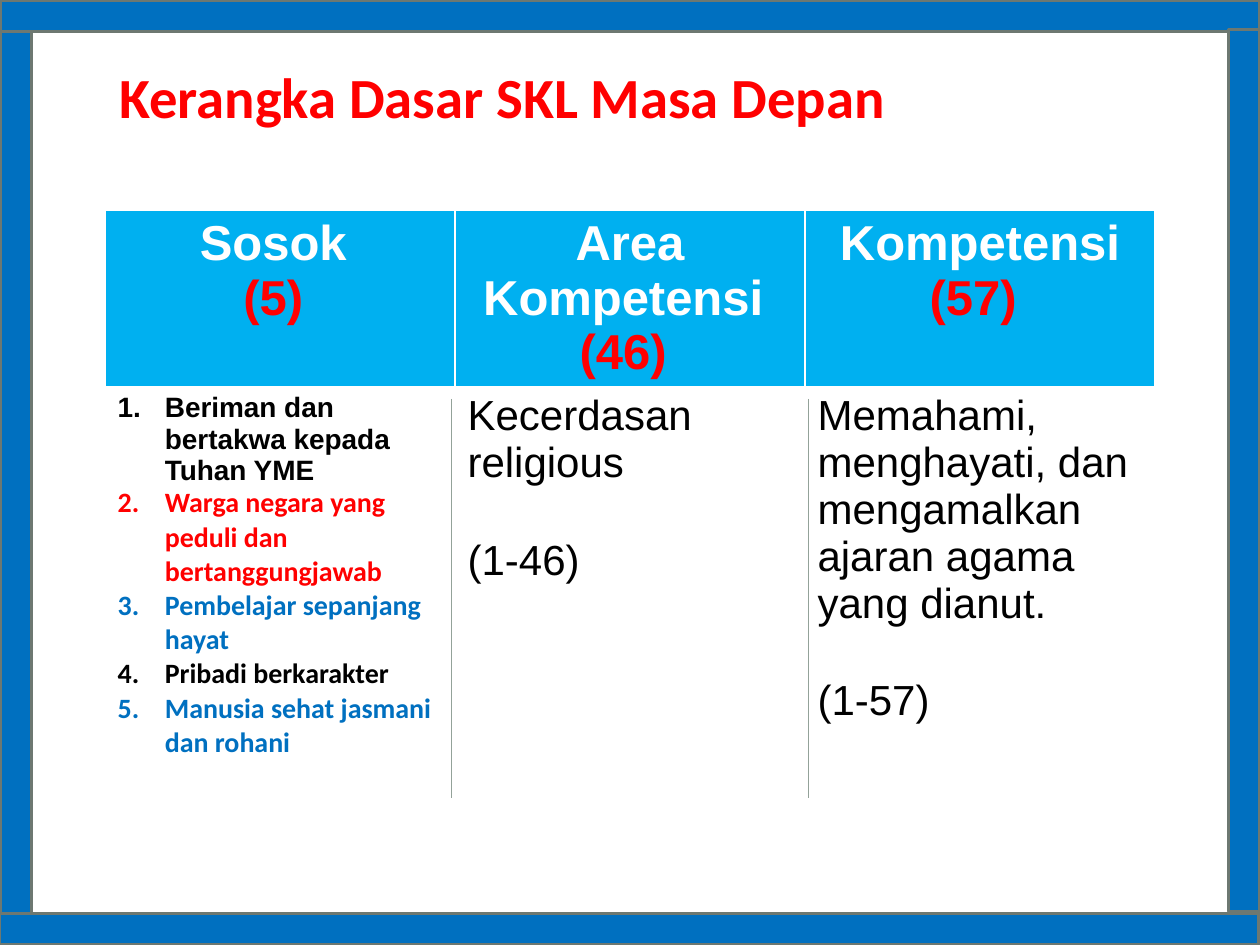
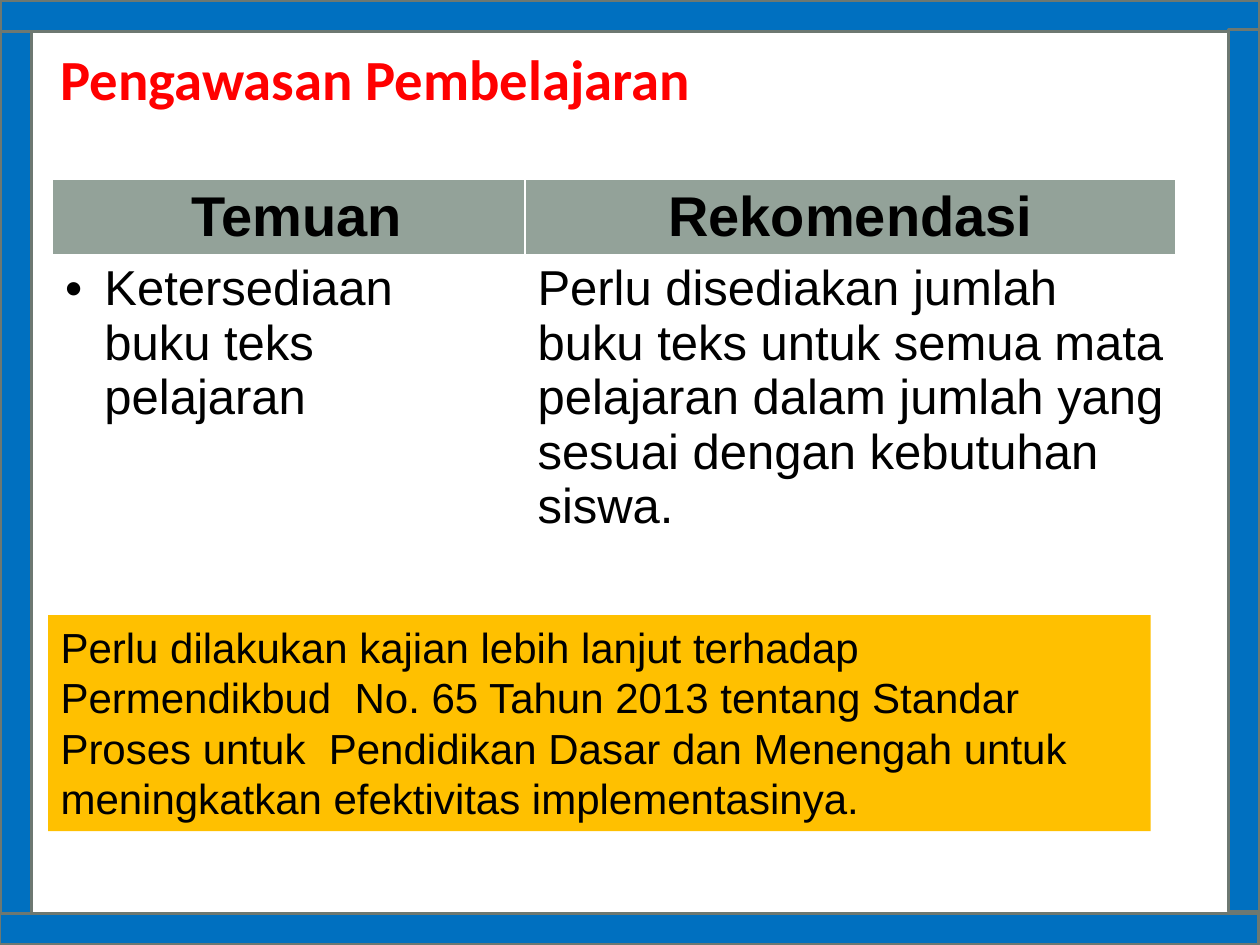
from lxml import etree
from pptx import Presentation
from pptx import util as u
from pptx.dml.color import RGBColor
from pptx.enum import shapes, text
from pptx.oxml.ns import qn

Pt = u.Pt
RED, BLUE, SKY, GOLD = "FF0000", "0070C0", "00B0F0", "FFC000"
BLACK, WHITE, SAGE, EDGE = "000000", "FFFFFF", "93A299", "6D7871"
LEFT, MID = text.PP_ALIGN.LEFT, text.PP_ALIGN.CENTER


def color(hue):
    return RGBColor.from_string(hue)


def mark(para, kind, indent):
    props = para._p.get_or_add_pPr()
    props.set("marL", str(Pt(indent)))
    props.set("indent", str(-Pt(indent)))
    if kind == "number":
        etree.SubElement(props, qn("a:buAutoNum"), type="arabicPeriod")
    else:
        etree.SubElement(props, qn("a:buFont"), typeface="Arial")
        etree.SubElement(props, qn("a:buChar"), char=kind)


def write(frame, words, new=False, size=24, face="Arial", hue=BLACK, bold=False,
          align=LEFT, bullet=None, indent=0, gap=0):
    para = frame.add_paragraph() if new else frame.paragraphs[0]
    if bullet:
        mark(para, bullet, indent)
    para.alignment = align
    if gap:
        para.space_before = Pt(gap)
    run = para.add_run()
    run.text = words
    font = run.font
    font.size, font.name, font.bold = Pt(size), face, bold
    font.color.rgb = color(hue)


class Deck:
    def __init__(self):
        self.file = Presentation()
        self.file.slide_width, self.file.slide_height = Pt(720), Pt(540)

    def page(self, title, left, top):
        self.slide = self.file.slides.add_slide(self.file.slide_layouts[5])
        for box in ((0, 0, 720, 18), (-0.5, 522, 720, 18),
                    (0, 18, 18, 504), (702, 17, 18, 504)):
            self.rect(box, BLUE, EDGE)
        head = self.slide.shapes.title
        head.left, head.top, head.width, head.height = map(Pt, (left, top, 499, 45))
        frame = head.text_frame
        frame.auto_size = text.MSO_AUTO_SIZE.NONE
        frame.vertical_anchor = text.MSO_ANCHOR.MIDDLE
        write(frame, title, size=32.4, face="Calibri", hue=RED, bold=True)

    def rect(self, box, fill, edge=None):
        shape = self.slide.shapes.add_shape(shapes.MSO_SHAPE.RECTANGLE, *map(Pt, box))
        shape.shadow.inherit = False
        shape.fill.solid()
        shape.fill.fore_color.rgb = color(fill)
        if edge:
            shape.line.color.rgb = color(edge)
            shape.line.width = Pt(2)
        else:
            shape.line.fill.background()
        return shape

    def note(self, box, words, fill, **form):
        frame = self.rect(box, fill).text_frame
        frame.word_wrap = True
        frame.vertical_anchor = text.MSO_ANCHOR.TOP
        write(frame, words, **form)

    def table(self, left, top, widths, heights, fill, cells):
        grid = self.slide.shapes.add_table(
            len(heights), len(widths), Pt(left), Pt(top),
            Pt(sum(widths)), Pt(sum(heights))).table
        for col, width in zip(grid.columns, widths):
            col.width = Pt(width)
        for r, (row, height) in enumerate(zip(cells, heights)):
            grid.rows[r].height = Pt(height)
            for c, lines in enumerate(row):
                cell = grid.cell(r, c)
                if r:
                    cell.fill.background()
                else:
                    cell.fill.solid()
                    cell.fill.fore_color.rgb = color(fill)
                for n, (words, form) in enumerate(lines):
                    write(cell.text_frame, words, new=n > 0, **form)

    def line(self, x, top, end):
        rule = self.slide.shapes.add_connector(
            shapes.MSO_CONNECTOR.STRAIGHT, Pt(x), Pt(top), Pt(x), Pt(end))
        rule.line.color.rgb = color(SAGE)
        rule.line.width = Pt(0.75)
        etree.SubElement(rule._element.spPr, qn("a:effectLst"))


def skills(deck):
    deck.page("Kerangka Dasar SKL Masa Depan", 61, 32)
    top = dict(size=28, bold=True, align=MID)
    heads = [[(name, dict(top, hue=WHITE)), (count, dict(top, hue=RED))]
             for name, count in (("Sosok ", "(5) "), ("Area Kompetensi ", "(46) "),
                                 ("Kompetensi", "(57) "))]
    traits = [(words, dict(size=16, bold=True, face=face, hue=hue,
                           bullet="number", indent=27))
              for words, face, hue in (
                  ("Beriman dan bertakwa kepada Tuhan YME", "Arial", BLACK),
                  ("Warga negara yang peduli dan bertanggungjawab", "Calibri", RED),
                  ("Pembelajar sepanjang hayat", "Calibri", BLUE),
                  ("Pribadi berkarakter", "Calibri", BLACK),
                  ("Manusia sehat jasmani dan rohani", "Calibri", BLUE))]
    area = [("Kecerdasan religious", {}), ("(1-46)", dict(gap=29))]
    goal = [("Memahami, menghayati, dan mengamalkan ajaran agama yang dianut.", {}),
            ("(1-57)", dict(gap=29))]
    deck.table(60, 120, [200] * 3, [99, 237], SKY, [heads, [traits, area, goal]])
    for x in (258, 462):
        deck.line(x, 228, 456)


def review(deck):
    deck.page("Pengawasan Pembelajaran", 27.5, 22)
    top = dict(size=32, bold=True, align=MID)
    heads = [[(name, top)] for name in (" Temuan", "Rekomendasi")]
    found = [("Ketersediaan buku teks pelajaran",
              dict(size=28, bullet="•", indent=22.5))]
    advice = [("Perlu disediakan jumlah buku teks untuk semua mata pelajaran dalam "
               "jumlah yang sesuai dengan kebutuhan siswa.", dict(size=28))]
    deck.table(30, 102.5, [270, 372], [42, 212], SAGE, [heads, [found, advice]])
    deck.note((27.5, 351.5, 630, 123.5),
              "Perlu dilakukan kajian lebih lanjut terhadap Permendikbud  No. 65 Tahun "
              "2013 tentang Standar Proses untuk  Pendidikan Dasar dan Menengah untuk "
              "meningkatkan efektivitas implementasinya.", GOLD)


def main():
    deck = Deck()
    skills(deck)
    review(deck)
    deck.file.save("out.pptx")


if __name__ == "__main__":
    main()
